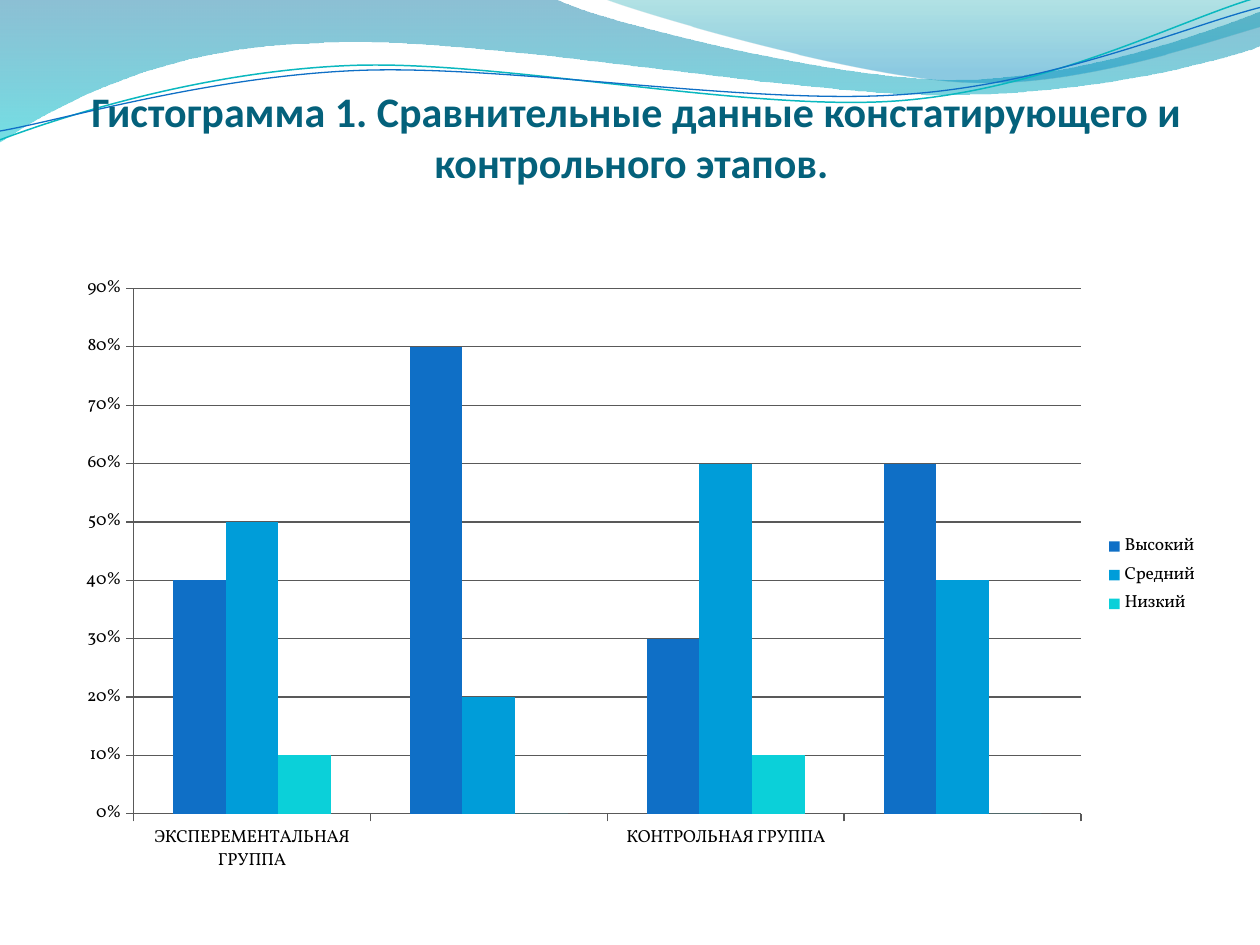
import math
from dataclasses import dataclass

from lxml import etree
from pptx import Presentation
from pptx import util as u
from pptx.chart.data import CategoryChartData
from pptx.dml.color import RGBColor
from pptx.enum import chart as charts, text
from pptx.oxml import parse_xml
from pptx.oxml.ns import nsdecls, qn


@dataclass(frozen=True)
class Theme:
    title_font: str = "Calibri"
    chart_font: str = "Vollkorn"
    title_size: int = 24
    chart_size: int = 10
    title_color: str = "04617B"
    chart_color: str = "000000"
    axis_color: str = "595959"
    series_colors: tuple = ("0F6FC6", "009DD9", "0BD0D9")
    teal_line: str = "0AB8BF"
    blue_line: str = "0F6FC6"
    # Gradient stops: position %, colour, opacity %
    wide_wave: tuple = ((0, "0074A1", 45), (100, "00C6CF", 55))
    right_wave: tuple = ((0, "00A1A9", 30), (80, "008BBF", 45))


def format_font(font, name, size, color, bold=False):
    font.name, font.size, font.bold = name, u.Pt(size), bold
    font.color.rgb = RGBColor.from_string(color)


def write_text(frame, content, align=text.PP_ALIGN.LEFT, **font_format):
    paragraph = frame.paragraphs[0]
    paragraph.alignment = align
    run = paragraph.add_run()
    run.text = content
    format_font(run.font, **font_format)


def turn(point, center, degrees):
    """Turn a point clockwise around a center."""
    x, y = point[0] - center[0], point[1] - center[1]
    cos, sin = math.cos(math.radians(degrees)), math.sin(math.radians(degrees))
    return center[0] + x * cos - y * sin, center[1] + x * sin + y * cos


class SlideBuilder:
    def __init__(self, slide, theme):
        self.slide, self.theme = slide, theme

    def outline(self, start, segments, close):
        """Segments hold one point for a line, three for a Bezier curve."""
        points = [start] + [point for segment in segments for point in segment]
        points = [(u.Inches(x), u.Inches(y)) for x, y in points]
        builder = self.slide.shapes.build_freeform(*points[0])
        builder.add_line_segments(points[1:], close=close)
        shape = builder.convert_to_shape()
        shape.shadow.inherit = False

        # Join each three points into one Bezier curve
        lines = iter(list(shape.element.iter(qn("a:lnTo"))))
        for segment in segments:
            steps = [next(lines) for _ in segment]
            if len(steps) == 3:
                bezier = etree.Element(qn("a:cubicBezTo"))
                steps[0].addprevious(bezier)
                for step in steps:
                    bezier.append(step[0])
                    step.getparent().remove(step)
        return shape

    def wave(self, start, segments, stops):
        shape = self.outline(start, segments, close=True)
        shape.line.fill.background()
        stop_xml = "".join(
            f'<a:gs pos="{position * 1000}"><a:srgbClr val="{color}">'
            f'<a:alpha val="{opacity * 1000}"/></a:srgbClr></a:gs>'
            for position, color, opacity in stops)
        gradient = parse_xml(f'<a:gradFill {nsdecls("a")} rotWithShape="1"><a:gsLst>{stop_xml}'
                             '</a:gsLst><a:lin ang="5400000" scaled="0"/></a:gradFill>')
        shape.element.spPr.find(qn("a:custGeom")).addnext(gradient)

    def curve(self, start, segments, color, width, center, tilt=2.7):
        level = [[turn(point, center, tilt) for point in segment] for segment in segments]
        shape = self.outline(turn(start, center, tilt), level, close=False)
        shape.rotation = 360 - tilt
        shape.fill.background()
        shape.line.color.rgb = RGBColor.from_string(color)
        shape.line.width = u.Pt(width)

    def title(self, content, left, top, width, height):
        title = self.slide.shapes.title
        title.left, title.top = u.Inches(left), u.Inches(top)
        title.width, title.height = u.Inches(width), u.Inches(height)
        frame = title.text_frame
        frame.word_wrap = True
        frame.auto_size = text.MSO_AUTO_SIZE.NONE
        frame.vertical_anchor = text.MSO_ANCHOR.BOTTOM
        frame.margin_left = frame.margin_right = frame.margin_bottom = 0
        frame.margin_top = u.Inches(0.05)
        write_text(frame, content, align=text.PP_ALIGN.CENTER, name=self.theme.title_font,
                   size=self.theme.title_size, color=self.theme.title_color, bold=True)
        # Bring the title in front of the waves
        title.element.getparent().append(title.element)

    def column_chart(self, categories, series, left, top, width, height, plot):
        data = CategoryChartData(number_format="0%")
        data.categories = categories
        for name, values in series.items():
            data.add_series(name, values)
        chart = self.slide.shapes.add_chart(
            charts.XL_CHART_TYPE.COLUMN_CLUSTERED, u.Inches(left), u.Inches(top),
            u.Inches(width), u.Inches(height), data).chart
        format_font(chart.font, self.theme.chart_font, self.theme.chart_size,
                    self.theme.chart_color)
        chart.has_title = False
        chart.has_legend = True
        chart.legend.position = charts.XL_LEGEND_POSITION.RIGHT
        chart.legend.include_in_layout = False

        # Columns
        columns = chart.plots[0]
        columns.gap_width, columns.overlap, columns.vary_by_categories = 150, 0, False
        for column, color in zip(columns.series, self.theme.series_colors):
            column.format.fill.solid()
            column.format.fill.fore_color.rgb = RGBColor.from_string(color)

        # Axes and grid
        values = chart.value_axis
        values.has_major_gridlines = True
        values.tick_labels.number_format = "0%"
        values.tick_labels.number_format_is_linked = False
        for axis in (chart.category_axis, values):
            axis.major_tick_mark = charts.XL_TICK_MARK.OUTSIDE
        for part in (chart.category_axis, values, values.major_gridlines):
            part.format.line.color.rgb = RGBColor.from_string(self.theme.axis_color)
            part.format.line.width = u.Pt(0.75)

        # Inner plot area, given in inches and stored as shares of the chart frame
        area = chart.element.find(".//" + qn("c:plotArea"))
        for old_layout in area.findall(qn("c:layout")):
            area.remove(old_layout)
        layout = etree.Element(qn("c:layout"))
        manual = etree.SubElement(layout, qn("c:manualLayout"))
        shares = [length / whole for length, whole in zip(plot, (width, height) * 2)]
        settings = [("layoutTarget", "inner"), ("xMode", "edge"), ("yMode", "edge"),
                    *zip("xywh", shares)]
        for tag, value in settings:
            etree.SubElement(manual, qn("c:" + tag)).set("val", str(value))
        area.insert(0, layout)


def main():
    presentation = Presentation()
    presentation.slide_width, presentation.slide_height = u.Inches(10), u.Inches(7.5)
    theme = Theme()
    slide = presentation.slides.add_slide(presentation.slide_layouts[5])
    builder = SlideBuilder(slide, theme)

    # Header waves
    builder.wave((0, 0), [
        [(4.4, -0.01)],
        [(4.76, 0.17), (6.64, 0.63), (7.58, 0.63)],
        [(8.53, 0.63), (9.58, 0.26), (10, 0.09)],
        [(10.01, 0.36)],
        [(9.83, 0.44), (8.7, 0.76), (7.46, 0.75)],
        [(6.22, 0.75), (3.82, 0.28), (2.57, 0.34)],
        [(1.29, 0.36), (0.46, 0.83), (-0.01, 1.13)]], theme.wide_wave)
    builder.wave((4.79, -0.01), [
        [(5.09, 0.11), (6.82, 0.62), (7.69, 0.65)],
        [(8.56, 0.69), (9.61, 0.32), (10, 0.21)],
        [(10, 0)]], theme.right_wave)

    # Thin curves
    builder.curve((0, 1.11), [
        [(0.48, 0.93), (1.58, 0.57), (2.77, 0.52)],
        [(3.95, 0.47), (5.93, 0.89), (7.13, 0.8)],
        [(8.33, 0.71), (9.38, 0.15), (9.98, -0.02)]], theme.teal_line, 0.85, (4.99, 0.57))
    builder.curve((0, 1.04), [
        [(0.47, 0.96), (1.64, 0.61), (2.83, 0.56)],
        [(4.03, 0.51), (5.97, 0.84), (7.17, 0.75)],
        [(8.36, 0.67), (9.41, 0.21), (10, 0.06)]], theme.blue_line, 0.75, (5, 0.59))

    # Title and chart
    builder.title("Гистограмма 1. Сравнительные данные констатирующего и контрольного этапов. ",
                  0.55, 0.23, 9, 1.25)
    builder.column_chart(
        ["ЭКСПЕРЕМЕНТАЛЬНАЯ ГРУППА", "", "КОНТРОЛЬНАЯ ГРУППА"],
        {"Высокий": (0.4, 0.8, 0.3, 0.6),
         "Средний": (0.5, 0.2, 0.6, 0.4),
         "Низкий": (0.1, 0, 0.1, 0)},
        0.5, 2.1, 9.11, 4.93, plot=(0.56, 0.19, 7.52, 4.17))
    presentation.save("out.pptx")


if __name__ == "__main__":
    main()
